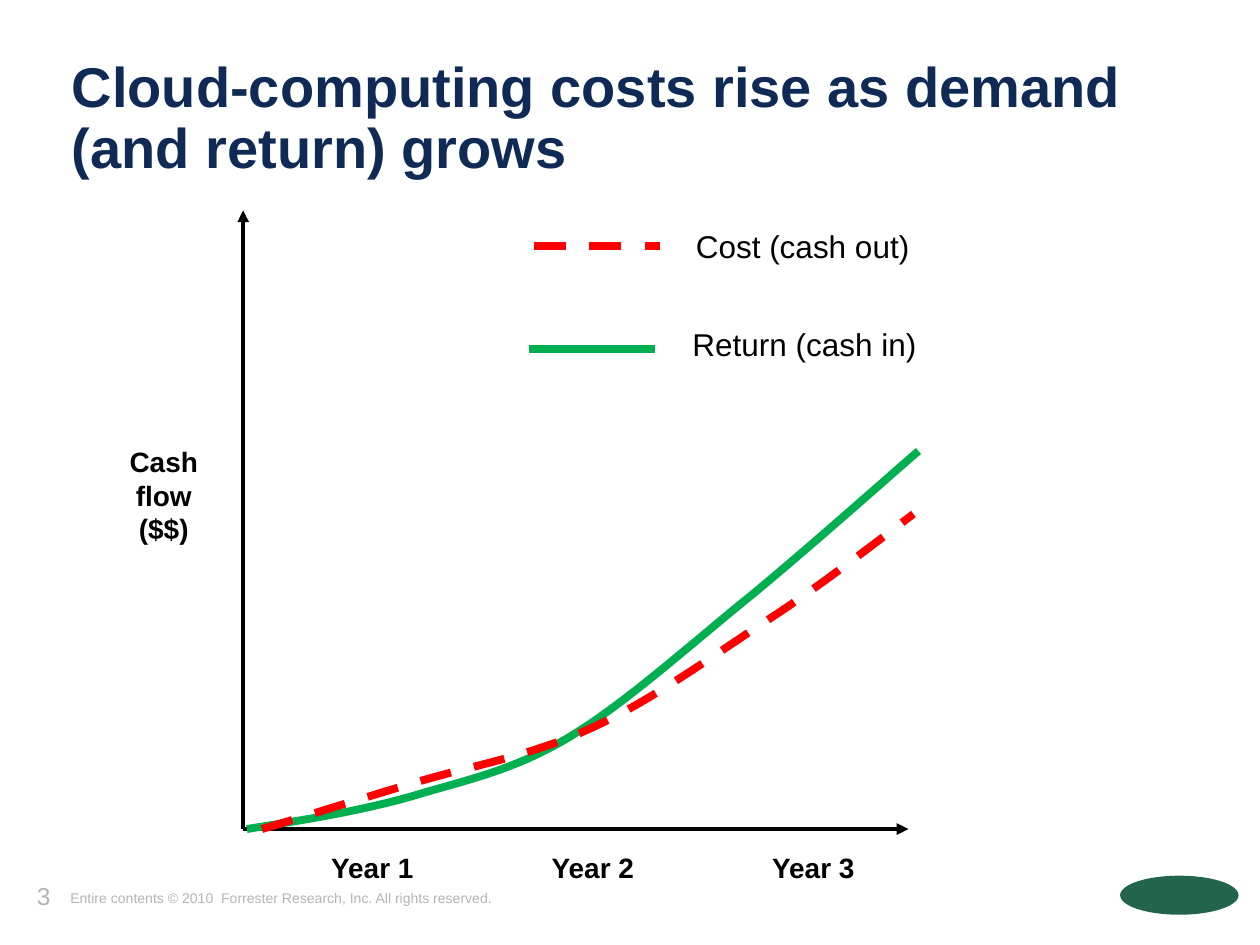
from dataclasses import dataclass
from typing import Optional

from lxml import etree
from pptx import Presentation
from pptx.dml.color import RGBColor
from pptx.enum.dml import MSO_LINE
from pptx.enum.shapes import MSO_CONNECTOR, MSO_SHAPE
from pptx.enum.text import MSO_ANCHOR, MSO_AUTO_SIZE, PP_ALIGN
from pptx.oxml.ns import qn
from pptx.util import Inches, Pt

DASH = MSO_LINE.DASH
STRAIGHT = MSO_CONNECTOR.STRAIGHT
OVAL = MSO_SHAPE.OVAL
TOP, MIDDLE = MSO_ANCHOR.TOP, MSO_ANCHOR.MIDDLE
LEFT, CENTER, RIGHT = PP_ALIGN.LEFT, PP_ALIGN.CENTER, PP_ALIGN.RIGHT
NO_AUTOFIT = MSO_AUTO_SIZE.NONE

FONT = "Arial"
COLORS = {
    "title": "0F2A55",
    "text": "000000",
    "footer": "B4B4B4",
    "cost": "FF0000",
    "return": "00B050",
    "badge": "23654B",
}
ORIGIN_X, ORIGIN_Y = 1.93, 6.58
STEPS_PER_CURVE = 16
SERIES_WIDTH = 4.5


@dataclass
class Label:
    lines: list[str]
    left: float
    top: float
    width: float
    height: float
    size: float
    color: str = "text"
    bold: bool = False
    align: PP_ALIGN = CENTER
    anchor: MSO_ANCHOR = TOP
    inset: bool = True
    wrap: bool = False


@dataclass
class Line:
    start: tuple[float, float]
    end: tuple[float, float]
    color: str
    width: float
    dash: Optional[MSO_LINE] = None
    arrow: bool = False


@dataclass
class Curve:
    points: list[tuple[float, float]]
    color: str
    dash: Optional[MSO_LINE] = None


YEARS = [
    Label([f"Year {index + 1}"], 2.62 + 1.75 * index, 6.75, 0.67, 0.27, 16,
          bold=True, inset=False)
    for index in range(3)
]
LABELS = YEARS + [
    Label(["Cash ", "flow", "($$)"], 1, 3.53, 0.6, 0.8, 16, bold=True, inset=False),
    Label(["Cost (cash out)"], 5.37, 1.75, 2, 0.4, 18, wrap=True),
    Label(["Return (cash in)"], 5.35, 2.53, 2.07, 0.4, 18),
    Label(["3"], 0.06, 6.94, 0.44, 0.33, 14, "footer", align=RIGHT),
    Label(["Entire contents © 2010  Forrester Research, Inc. All rights reserved."],
          0.46, 7.01, 3.59, 0.23, 8, "footer", align=LEFT, anchor=MIDDLE),
]
AXES = [
    Line((ORIGIN_X, ORIGIN_Y), (ORIGIN_X, 1.67), "text", 2.25, arrow=True),
    Line((ORIGIN_X, ORIGIN_Y), (7.21, ORIGIN_Y), "text", 2.25, arrow=True),
]
LEGEND_KEYS = [
    Line((4.24, 1.95), (5.24, 1.95), "cost", SERIES_WIDTH, DASH),
    Line((4.2, 2.77), (5.2, 2.77), "return", SERIES_WIDTH),
]
CURVES = [
    Curve([(1.96, ORIGIN_Y), (2.4, 6.51), (2.85, 6.44), (3.27, 6.32),
           (3.7, 6.19), (4.07, 6.12), (4.52, 5.85),
           (4.97, 5.58), (5.51, 5.09), (5.97, 4.72),
           (6.43, 4.34), (7.07, 3.77), (7.29, 3.58)], "return"),
    Curve([(2.08, ORIGIN_Y), (2.29, 6.52), (2.86, 6.34), (3.3, 6.21),
           (3.73, 6.08), (4.22, 6), (4.69, 5.78),
           (5.16, 5.57), (5.68, 5.19), (6.11, 4.91),
           (6.54, 4.63), (7.01, 4.26), (7.25, 4.08)], "cost", DASH),
]


def color(name: str) -> RGBColor:
    return RGBColor.from_string(COLORS[name])


def add_run(paragraph, text: str, size: float, color_name: str, bold: bool) -> None:
    run = paragraph.add_run()
    run.text = text
    run.font.name = FONT
    run.font.size = Pt(size)
    run.font.bold = bold
    run.font.color.rgb = color(color_name)


def add_title(slide, text: str) -> None:
    title = slide.shapes.title
    title.left, title.top = Inches(0.47), Inches(0.42)
    title.width, title.height = Inches(9), Inches(0.45)
    frame = title.text_frame
    frame.word_wrap = True
    frame.auto_size = NO_AUTOFIT
    frame.vertical_anchor = TOP
    paragraph = frame.paragraphs[0]
    paragraph.alignment = LEFT
    paragraph.line_spacing = 0.9
    add_run(paragraph, text, 32, "title", True)


def add_label(slide, label: Label) -> None:
    shape = slide.shapes.add_textbox(Inches(label.left), Inches(label.top),
                                     Inches(label.width), Inches(label.height))
    frame = shape.text_frame
    frame.word_wrap = label.wrap
    frame.vertical_anchor = label.anchor
    if not label.inset:
        frame.margin_left = frame.margin_right = 0
        frame.margin_top = frame.margin_bottom = 0
    for index, text in enumerate(label.lines):
        paragraph = frame.add_paragraph() if index else frame.paragraphs[0]
        paragraph.alignment = label.align
        add_run(paragraph, text, label.size, label.color, label.bold)


def format_line(shape, color_name: str, width: float, dash: Optional[MSO_LINE]) -> None:
    shape.line.color.rgb = color(color_name)
    shape.line.width = Pt(width)
    if dash is not None:
        shape.line.dash_style = dash


def add_line(slide, line: Line) -> None:
    connector = slide.shapes.add_connector(
        STRAIGHT, *(Inches(value) for value in line.start + line.end))
    format_line(connector, line.color, line.width, line.dash)
    properties = connector._element.spPr
    if line.arrow:
        etree.SubElement(properties.find(qn("a:ln")), qn("a:tailEnd"), type="triangle")
    etree.SubElement(properties, qn("a:effectLst"))


def bezier(points: list[tuple[float, float]], t: float) -> tuple[int, int]:
    weights = ((1 - t) ** 3, 3 * t * (1 - t) ** 2, 3 * t ** 2 * (1 - t), t ** 3)
    x, y = (sum(weight * value for weight, value in zip(weights, values))
            for values in zip(*points))
    return Inches(x), Inches(y)


def add_curve(slide, curve: Curve) -> None:
    vertices = [
        bezier(curve.points[first:first + 4], step / STEPS_PER_CURVE)
        for first in range(0, len(curve.points) - 1, 3)
        for step in range(1, STEPS_PER_CURVE + 1)
    ]
    start_x, start_y = curve.points[0]
    builder = slide.shapes.build_freeform(Inches(start_x), Inches(start_y))
    builder.add_line_segments(vertices, close=False)
    shape = builder.convert_to_shape()
    shape.shadow.inherit = False
    shape.fill.background()
    format_line(shape, curve.color, SERIES_WIDTH, curve.dash)


def add_badge(slide) -> None:
    badge = slide.shapes.add_shape(OVAL, Inches(8.89), Inches(6.95),
                                   Inches(0.94), Inches(0.31))
    badge.shadow.inherit = False
    badge.fill.solid()
    badge.fill.fore_color.rgb = color("badge")
    badge.line.fill.background()


def main() -> None:
    presentation = Presentation()
    presentation.slide_width, presentation.slide_height = Inches(10), Inches(7.5)
    slide = presentation.slides.add_slide(presentation.slide_layouts[5])
    add_badge(slide)
    add_title(slide, "Cloud-computing costs rise as demand (and return) grows")
    for line in AXES + LEGEND_KEYS:
        add_line(slide, line)
    for curve in CURVES:
        add_curve(slide, curve)
    for label in LABELS:
        add_label(slide, label)
    presentation.save("out.pptx")


if __name__ == "__main__":
    main()
